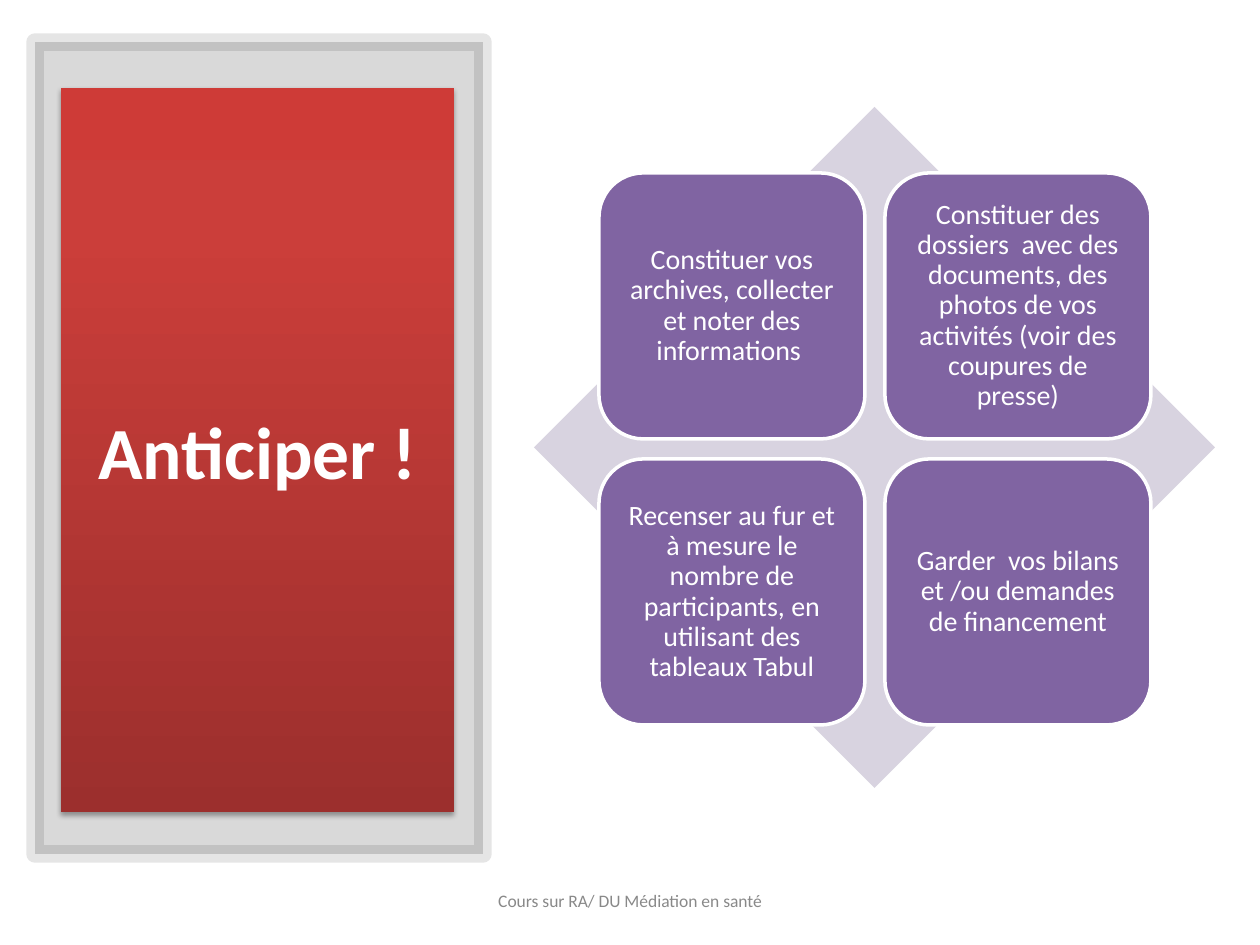
from lxml import etree
from pptx import Presentation
from pptx.dml.color import RGBColor
from pptx.enum.shapes import MSO_SHAPE
from pptx.enum.text import MSO_ANCHOR, PP_ALIGN
from pptx.oxml import parse_xml
from pptx.oxml.ns import nsdecls, qn
from pptx.util import Pt

RECT, ROUND, DIAMOND = MSO_SHAPE.RECTANGLE, MSO_SHAPE.ROUNDED_RECTANGLE, MSO_SHAPE.DIAMOND
MIDDLE, CENTER = MSO_ANCHOR.MIDDLE, PP_ALIGN.CENTER

TITLE = "Anticiper !"
FOOTER = "Cours sur RA/ DU Médiation en santé"
TILES = [
    "Constituer vos archives, collecter et noter des informations ",
    "Constituer des dossiers  avec des documents, des photos de vos activités (voir des coupures de presse)",
    "Recenser au fur et à mesure le nombre de participants, en utilisant des tableaux Tabul",
    "Garder  vos bilans et /ou demandes de financement",
]
COLORS = {"black": "000000", "white": "FFFFFF", "gray": "898989",
          "pale": "D8D3E0", "violet": "8064A2"}
REDS = [(0, "9C2F2D"), (80, "CB3E3A"), (100, "CE3B37")]
FONT = "Calibri"
SCALE = 914400 / 126
SIDE, STEP, LEFT, TOP = 266, 286, 599, 173


def px(n):
    return round(n * SCALE)


def rgb(name):
    return RGBColor.from_string(COLORS[name])


def fade(fill, share):
    color = fill._xPr.find(".//" + qn("a:srgbClr"))
    etree.SubElement(color, qn("a:alpha")).set("val", str(share * 1000))


def draw(kind, box, fill=None, line=None, width=0):
    shape = slide.shapes.add_shape(kind, *map(px, box))
    shape.shadow.inherit = False
    if fill:
        shape.fill.solid()
        shape.fill.fore_color.rgb = rgb(fill)
    if line:
        shape.line.color.rgb = rgb(line)
        shape.line.width = Pt(width)
    else:
        shape.line.fill.background()
    return shape


def write(shape, text, size, color, bold=False, pad=None, space=None):
    frame = shape.text_frame
    frame.word_wrap = True
    frame.vertical_anchor = MIDDLE
    if pad is not None:
        frame.margin_left = frame.margin_right = px(pad)
        frame.margin_top = frame.margin_bottom = px(pad)
    para = frame.paragraphs[0]
    para.alignment = CENTER
    if space:
        para.line_spacing = space
    run = para.add_run()
    run.text = text
    font = run.font
    font.name, font.size, font.bold = FONT, Pt(size), bold
    font.color.rgb = rgb(color)


def shade(shape):
    stops = "".join(f'<a:gs pos="{pos * 1000}"><a:srgbClr val="{color}"/></a:gs>'
                    for pos, color in REDS)
    props = shape._element.spPr
    props.find(qn("a:prstGeom")).addnext(parse_xml(
        f'<a:gradFill {nsdecls("a")} rotWithShape="1"><a:gsLst>{stops}</a:gsLst>'
        '<a:lin ang="16200000" scaled="0"/></a:gradFill>'))
    props.find(qn("a:effectLst")).append(parse_xml(
        f'<a:outerShdw {nsdecls("a")} blurRad="{Pt(3.1)}" dist="{Pt(1.8)}" '
        'dir="5400000" rotWithShape="0"><a:srgbClr val="000000">'
        '<a:alpha val="35000"/></a:srgbClr></a:outerShdw>'))


deck = Presentation()
deck.slide_width, deck.slide_height = px(1260), px(945)
slide = deck.slides.add_slide(deck.slide_layouts[6])

frame = draw(RECT, (35, 42, 448, 812), "black", "black", 10)
fade(frame.fill, 15)
fade(frame.line.fill, 10)
etree.SubElement(frame.line.fill._xPr, qn("a:round"))

panel = draw(RECT, (61, 88, 393, 724))
shade(panel)
write(panel, TITLE, 42, "white", bold=True)

foot = slide.shapes.add_textbox(*map(px, (417, 876, 426, 50)))
write(foot, FOOTER, 10, "gray")

draw(DIAMOND, (534, 107, 681, 681), "pale")
for i, text in enumerate(TILES):
    row, col = divmod(i, 2)
    tile = draw(ROUND, (LEFT + col * STEP, TOP + row * STEP, SIDE, SIDE),
                "violet", "white", 2)
    write(tile, text, 16, "white", pad=9, space=0.9)

deck.save("out.pptx")
